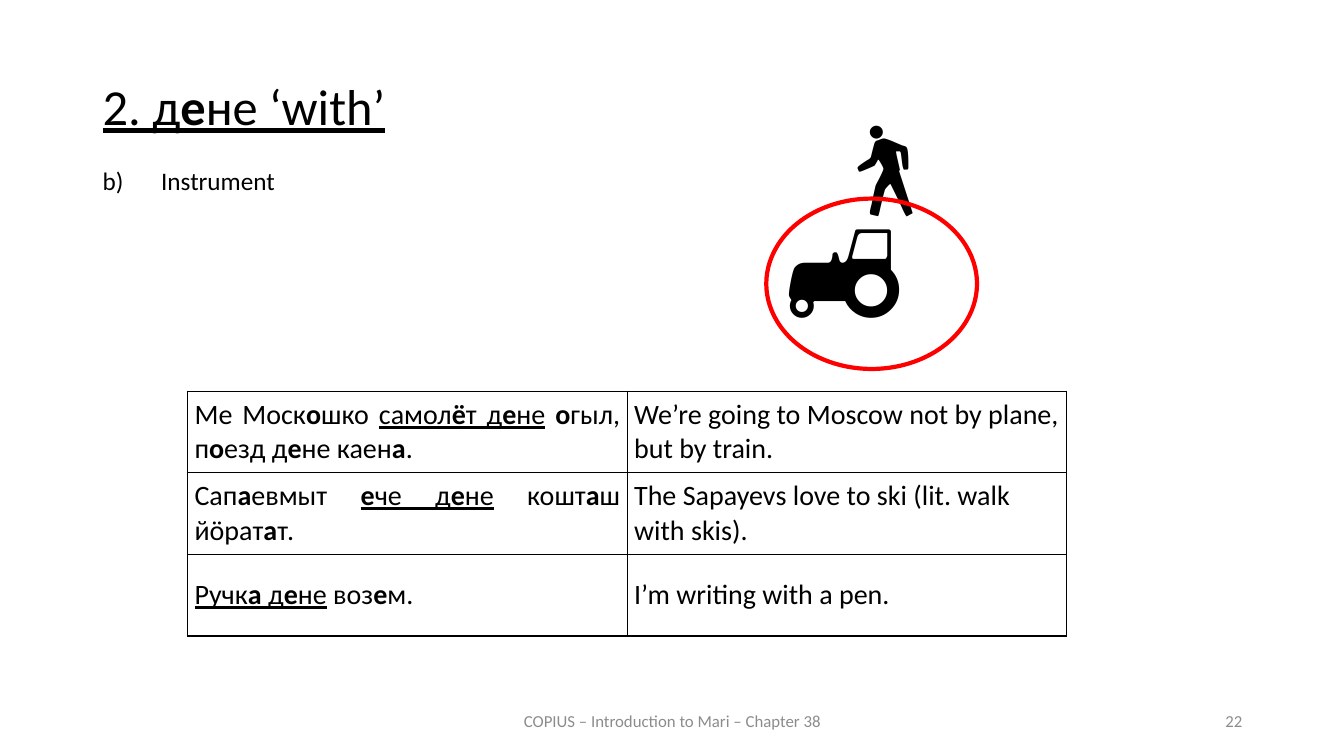
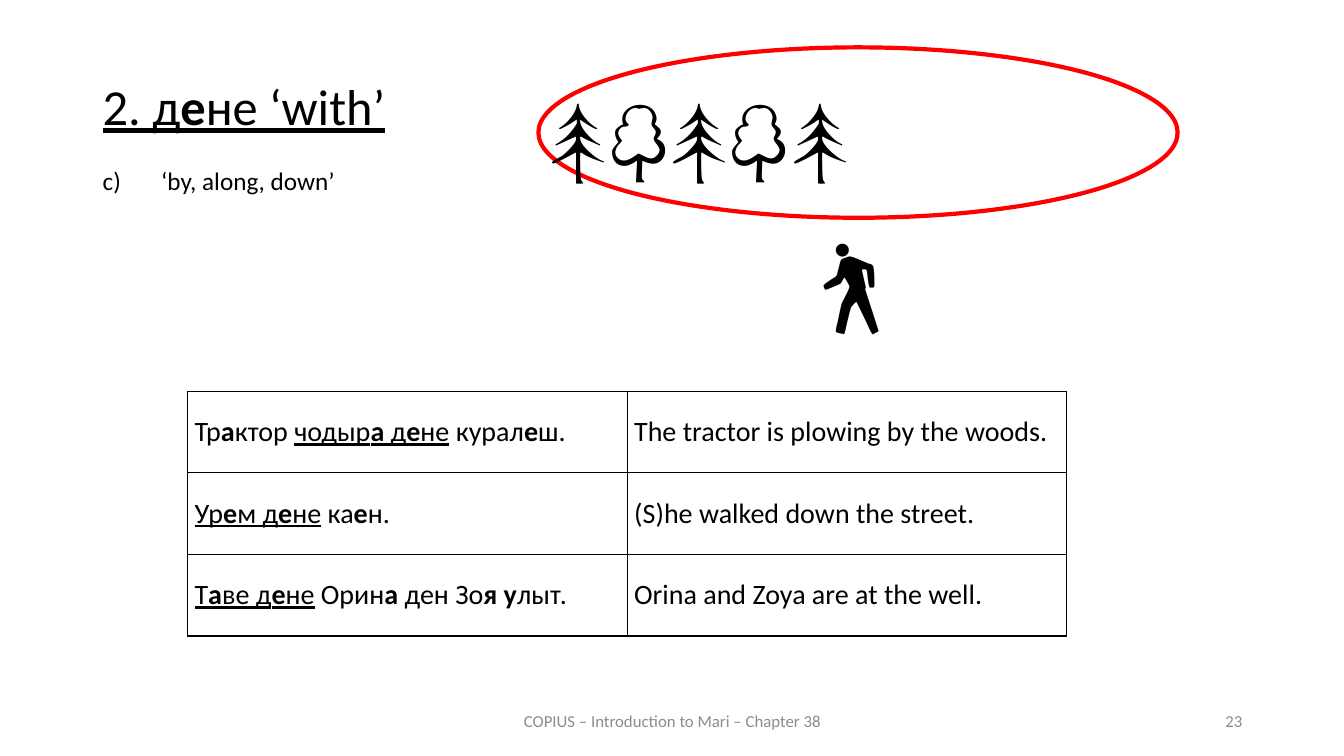
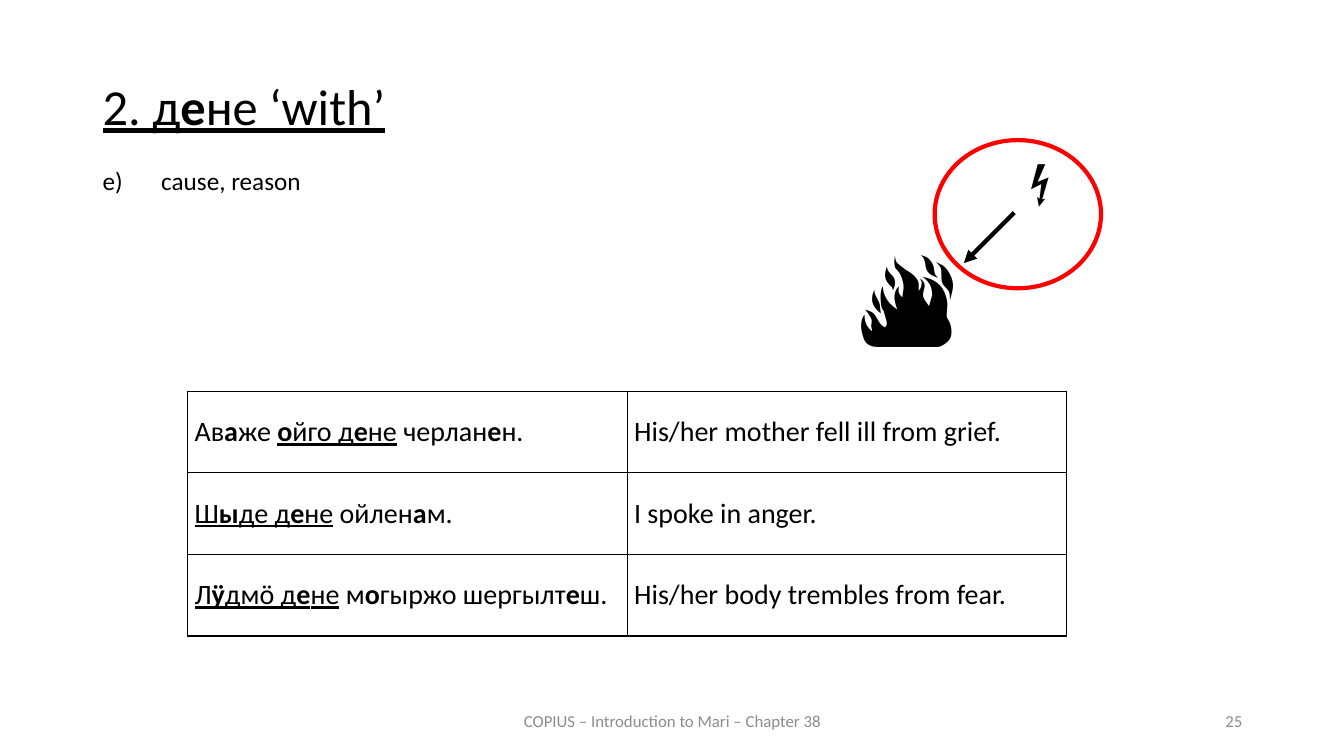
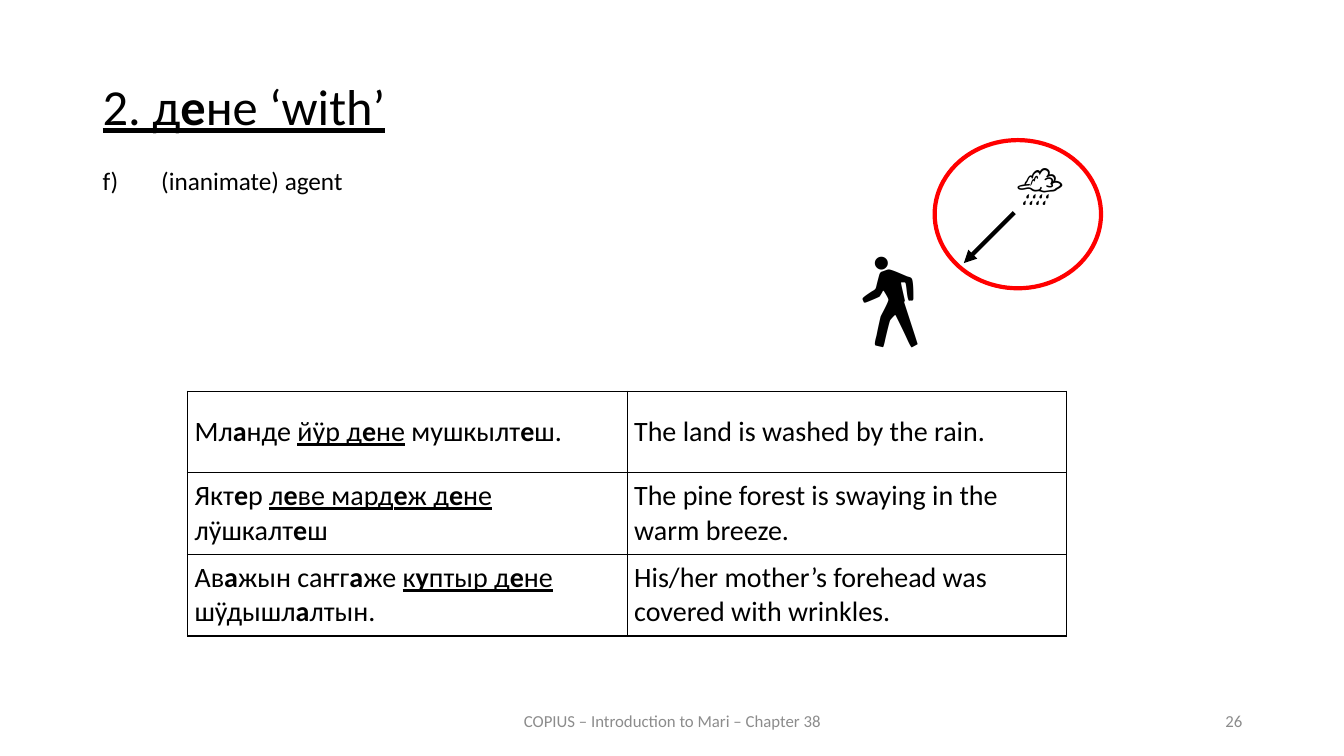
from lxml.etree import SubElement
from pptx import Presentation
from pptx.dml.color import RGBColor
from pptx.enum.shapes import MSO_CONNECTOR, MSO_SHAPE
from pptx.enum.text import MSO_ANCHOR, PP_ALIGN
from pptx.oxml import parse_xml
from pptx.oxml.ns import nsdecls, qn
from pptx.util import Inches, Pt

# Shared style
FONT = "Calibri"
BLACK, GREY, RED = "000000", "8C8C8C", "FF0000"
TITLE = "_2. д*е*не ‘with’_"
FOOTER = "COPIUS – Introduction to Mari – Chapter 38"
LEFT, CENTER, RIGHT, JUSTIFY = (
    PP_ALIGN.LEFT, PP_ALIGN.CENTER, PP_ALIGN.RIGHT, PP_ALIGN.JUSTIFY)
COLUMN_WIDTH, ROW_HEIGHT = 4.36, 0.81


def rgb(color):
    return RGBColor.from_string(color)


def write(frame, text, size, color=BLACK, align=LEFT, anchor=MSO_ANCHOR.TOP):
    """Fill a text frame; * switches bold and _ switches underline."""
    frame.word_wrap = True
    frame.vertical_anchor = anchor
    paragraph = frame.paragraphs[0]
    paragraph.alignment = align
    paragraph.font.name = FONT
    paragraph.font.size = Pt(size)
    paragraph.font.color.rgb = rgb(color)
    bold = underline = False
    for piece in text.replace("*", "|*|").replace("_", "|_|").split("|"):
        if piece == "*":
            bold = not bold
        elif piece == "_":
            underline = not underline
        elif piece:
            run = paragraph.add_run()
            run.text = piece
            if bold:
                run.font.bold = True
            if underline:
                run.font.underline = True
    return paragraph


# Content: symbols are (text, size, alignment, box), rings are boxes
CAUSE_RING = (9.27, 1.39, 1.65, 1.47)
AFFECTED_BOX = (8.41, 2.23, 1.46, 1.31)
CAUSE_BOX = (9.87, 1.48, 0.89, 0.64)

lessons = [
    dict(
        number=22, letter="b)", meaning="Instrument", align=JUSTIFY,
        examples=[
            ("Ме Моск*о*шко _самол*ё*т д*е*не_ *о*гыл, п*о*езд д*е*не каен*а*.",
             "We’re going to Moscow not by plane, but by train."),
            ("Сап*а*евмыт _*е*че д*е*не_ кошт*а*ш йӧрат*а*т.",
             "The Sapayevs love to ski (lit. walk with skis)."),
            ("_Ручк*а* д*е*не_ воз*е*м.", "I’m writing with a pen."),
        ],
        symbols=[("🚶", 72, LEFT, (8.36, 0.93, 2.11, 1.31)),
                 ("🚜", 100, LEFT, (7.58, 1.71, 2.09, 1.78))],
        ring=(7.6, 1.97, 2.09, 1.69), arrow=False),
    dict(
        number=23, letter="c)", meaning="‘by, along, down’", align=JUSTIFY,
        examples=[
            ("Тр*а*ктор _чодыр*а* д*е*не_ курал*е*ш.",
             "The tractor is plowing by the woods."),
            ("_Ур*е*м д*е*не_ ка*е*н.", "(S)he walked down the street."),
            ("_Т*а*ве д*е*не_ Орин*а* ден Зо*я у*лыт.",
             "Orina and Zoya are at the well."),
        ],
        symbols=[("🚶", 72, LEFT, (8.02, 2.1, 2.11, 1.31)),
                 ("🌲🌳🌲🌳🌲", 72, LEFT, (5.34, 0.66, 6.66, 1.31))],
        ring=(5.34, 0.47, 6.34, 1.69), arrow=False),
    dict(
        number=25, letter="e)", meaning="cause, reason", align=JUSTIFY,
        examples=[
            ("Ав*а*же _*о*йго д*е*не_ черлан*е*н.",
             "His/her mother fell ill from grief."),
            ("_Ш*ы*де д*е*не_ ойлен*а*м.", "I spoke in anger."),
            ("_Л*ӱ*дмӧ д*е*не_ м*о*гыржо шергылт*е*ш.",
             "His/her body trembles from fear."),
        ],
        symbols=[("🔥", 72, LEFT, AFFECTED_BOX), ("⚡", 32, CENTER, CAUSE_BOX)],
        ring=CAUSE_RING, arrow=True),
    dict(
        number=26, letter="f)", meaning="(inanimate) agent", align=LEFT,
        examples=[
            ("Мл*а*нде _йӱр д*е*не_ мушкылт*е*ш.",
             "The land is washed by the rain."),
            ("Якт*е*р _л*е*ве мард*е*ж д*е*не_ лӱшкалт*е*ш",
             "The pine forest is swaying in the warm breeze."),
            ("Ав*а*жын саҥг*а*же _к*у*птыр д*е*не_ шӱдышл*а*лтын.",
             "His/her mother’s forehead was covered with wrinkles."),
        ],
        symbols=[("🚶", 72, LEFT, AFFECTED_BOX), ("🌧️", 32, CENTER, CAUSE_BOX)],
        ring=CAUSE_RING, arrow=True),
]

deck = Presentation()
deck.slide_width, deck.slide_height = Inches(13.33), Inches(7.5)

for lesson in lessons:
    slide = deck.slides.add_slide(deck.slide_layouts[6])
    shapes = slide.shapes

    # Title
    title = shapes.add_textbox(*map(Inches, (0.92, 0.76, 11.5, 0.83)))
    heading = write(title.text_frame, TITLE, 36, align=JUSTIFY)
    heading.line_spacing = 0.9
    heading.space_before = Pt(12)

    # Footer and slide number
    footer = shapes.add_textbox(*map(Inches, (4.42, 6.95, 4.5, 0.4)))
    write(footer.text_frame, FOOTER, 12, GREY, CENTER, MSO_ANCHOR.MIDDLE)
    number = shapes.add_textbox(*map(Inches, (9.42, 6.95, 3, 0.4)))
    write(number.text_frame, str(lesson["number"]), 12, GREY, RIGHT,
          MSO_ANCHOR.MIDDLE)

    # Meaning, set off from its letter by a tab stop
    meaning = shapes.add_textbox(*map(Inches, (0.92, 1.59, 11.08, 0.4)))
    entry = write(meaning.text_frame,
                  lesson["letter"] + "\t" + lesson["meaning"], 18)
    tab_stops = parse_xml(
        f'<a:tabLst {nsdecls("a")}><a:tab pos="{Inches(0.58)}" algn="l"/></a:tabLst>')
    entry._p.get_or_add_pPr().insert(0, tab_stops)

    # Example sentences and translations
    examples = lesson["examples"]
    table = shapes.add_table(
        len(examples), 2, Inches(1.86), Inches(3.88),
        Inches(2 * COLUMN_WIDTH), Inches(len(examples) * ROW_HEIGHT)).table
    table.first_row = table.horz_banding = False
    for column in table.columns:
        column.width = Inches(COLUMN_WIDTH)
    for row, sentences in zip(table.rows, examples):
        row.height = Inches(ROW_HEIGHT)
        for cell, sentence, align in zip(row.cells, sentences,
                                         (lesson["align"], LEFT)):
            write(cell.text_frame, sentence, 20, align=align)
            cell.vertical_anchor = MSO_ANCHOR.MIDDLE
            cell.margin_left = cell.margin_right = Inches(0.07)
            cell.margin_top = cell.margin_bottom = 0
            borders = cell._tc.get_or_add_tcPr()
            for side in ("lnL", "lnR", "lnT", "lnB"):
                borders.append(parse_xml(
                    f'<a:{side} {nsdecls("a")} w="{Pt(1)}"><a:solidFill>'
                    f'<a:srgbClr val="{BLACK}"/></a:solidFill></a:{side}>'))
            cell.fill.background()

    # Symbols, with the ring between them
    for position, (symbol, size, align, box) in enumerate(lesson["symbols"]):
        if position == 1:
            ring = shapes.add_shape(MSO_SHAPE.OVAL, *map(Inches, lesson["ring"]))
            ring.shadow.inherit = False
            ring.fill.background()
            ring.line.color.rgb = rgb(RED)
            ring.line.width = Pt(3)
        holder = shapes.add_textbox(*map(Inches, box))
        write(holder.text_frame, symbol, size, align=align)

    # Arrow from the cause to what it affects
    if lesson["arrow"]:
        arrow = shapes.add_connector(
            MSO_CONNECTOR.STRAIGHT, *map(Inches, (10.06, 2.11, 9.56, 2.61)))
        arrow.line.color.rgb = rgb(BLACK)
        arrow.line.width = Pt(3)
        SubElement(arrow.line._get_or_add_ln(), qn("a:tailEnd"), type="triangle")
        SubElement(arrow._element.spPr, qn("a:effectLst"))

deck.save("out.pptx")
